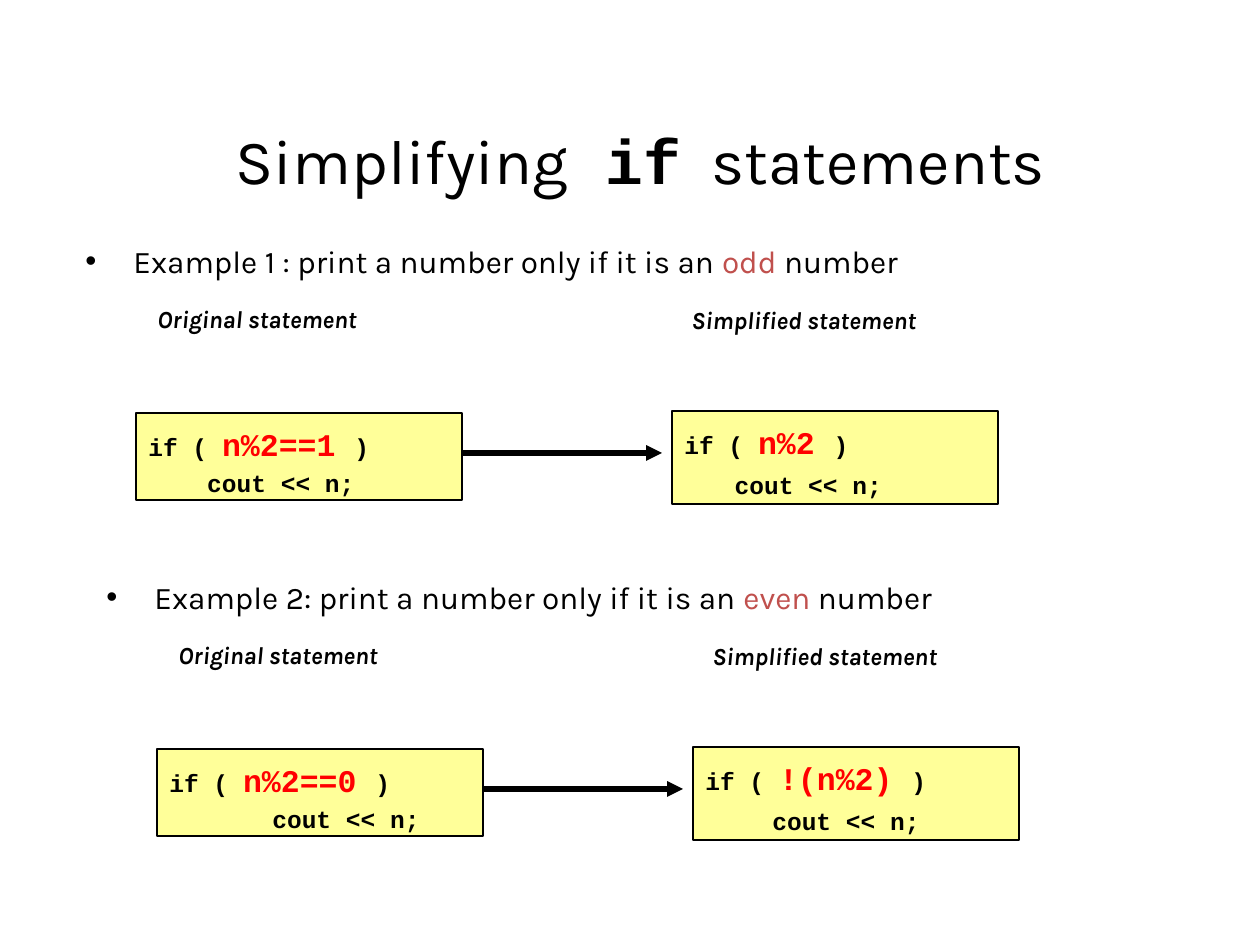
from lxml.etree import SubElement
from pptx import Presentation
from pptx.dml.color import RGBColor
from pptx.enum.shapes import MSO_CONNECTOR, MSO_SHAPE
from pptx.enum.text import MSO_ANCHOR, MSO_AUTO_SIZE, PP_ALIGN
from pptx.oxml.ns import qn
from pptx.util import Emu, Pt

BLACK = RGBColor(0x00, 0x00, 0x00)
WHITE = RGBColor(0xFF, 0xFF, 0xFF)
BRICK = RGBColor(0xC0, 0x50, 0x4D)
RED = RGBColor(0xFF, 0x00, 0x00)
YELLOW = RGBColor(0xFF, 0xFF, 0x99)
BODY, CODE = "Karla", "Courier New"


def px(n):
    return Emu(round(n * 914400 / 126))


class Deck:
    """Holds the style and the current slide."""

    def __init__(self):
        self.prs = Presentation()
        self.prs.slide_width, self.prs.slide_height = px(1260), px(945)
        self.s = self.prs.slides.add_slide(self.prs.slide_layouts[5])

    def run(self, p, text, size, font=BODY, color=BLACK, bold=False, italic=False):
        r = p.add_run()
        r.text = text
        r.font.name, r.font.size = font, Pt(size)
        r.font.bold, r.font.italic = bold, italic
        r.font.color.rgb = color

    def frame(self, sp, top_inset):
        tf = sp.text_frame
        tf.word_wrap = True
        tf.auto_size = MSO_AUTO_SIZE.NONE
        tf.vertical_anchor = MSO_ANCHOR.TOP
        tf.margin_top = px(top_inset)
        tf.paragraphs[0].alignment = PP_ALIGN.LEFT
        return tf

    def title(self, x, y, w, h, before, code, after):
        sp = self.s.shapes.title
        sp.left, sp.top, sp.width, sp.height = px(x), px(y), px(w), px(h)
        tf = self.frame(sp, 6)
        tf.vertical_anchor = MSO_ANCHOR.MIDDLE
        p = tf.paragraphs[0]
        p.alignment = PP_ALIGN.CENTER
        self.run(p, before, 36)
        self.run(p, code, 36, CODE, bold=True)
        self.run(p, after, 36)

    def text_box(self, x, y, w):
        sp = self.s.shapes.add_textbox(px(x), px(y), px(w), px(53))
        sp.fill.solid()
        sp.fill.fore_color.rgb = WHITE
        return self.frame(sp, 9).paragraphs[0]

    def bullet(self, x, y, before, key, after):
        p = self.text_box(x, y, 914)
        pPr = p._p.get_or_add_pPr()
        pPr.set("marL", str(px(48)))
        pPr.set("indent", str(-px(48)))
        SubElement(pPr, qn("a:buFont")).set("typeface", "Arial")
        SubElement(pPr, qn("a:buChar")).set("char", "•")
        self.run(p, before, 18)
        self.run(p, key, 18, color=BRICK)
        self.run(p, after, 18)

    def label(self, x, y, text):
        self.run(self.text_box(x, y, 346), text, 14, bold=True, italic=True)

    def code_box(self, x, y, h, condition, indent, indent_size):
        sp = self.s.shapes.add_shape(MSO_SHAPE.RECTANGLE, px(x), px(y), px(326), px(h))
        sp.shadow.inherit = False
        sp.fill.solid()
        sp.fill.fore_color.rgb = YELLOW
        sp.line.color.rgb = BLACK
        sp.line.width = Pt(0.75)
        tf = self.frame(sp, 12)
        p = tf.paragraphs[0]
        self.run(p, "if ( ", 14, CODE, bold=True)
        self.run(p, condition, 18, CODE, RED, bold=True)
        self.run(p, ")", 14, CODE, bold=True)
        p = tf.add_paragraph()
        p.alignment = PP_ALIGN.LEFT
        p.space_before = Pt(3)
        self.run(p, " " * indent, indent_size, CODE, bold=True)
        self.run(p, "cout << n;", 14, CODE, bold=True)

    def arrow(self, x1, x2, y):
        c = self.s.shapes.add_connector(MSO_CONNECTOR.STRAIGHT, px(x1), px(y), px(x2), px(y))
        c.line.color.rgb = BLACK
        c.line.width = Pt(3)
        SubElement(c.line._get_or_add_ln(), qn("a:tailEnd")).set("type", "triangle")
        SubElement(c._element.spPr, qn("a:effectLst"))

    def example(self, x, y, intro, key, after, original, simplified):
        self.bullet(x, y, intro, key, after)
        self.label(x + 72, y + 62, "Original statement")
        self.label(x + 606, y + 63, "Simplified statement")
        self.code_box(x + 63, y + 180, 87, *original)
        self.code_box(x + 599, y + 178, 93, *simplified)
        self.arrow(x + 389, x + 589, y + 220)


def main():
    deck = Deck()
    deck.title(105, 107, 1071, 105, "Simplifying", " if", "  statements")

    # Each code box: condition, indent of the second line, size of that indent
    deck.example(73, 233, "Example 1 : print a number only if it is an ", "odd ", "number",
                 ("n%2==1 ", 4, 14), ("n%2 ", 3, 16))
    deck.example(94, 569, "Example 2: print a number only if it is an ", "even", " number",
                 ("n%2==0 ", 7, 14), ("!(n%2) ", 4, 16))

    deck.prs.save("out.pptx")


if __name__ == "__main__":
    main()
